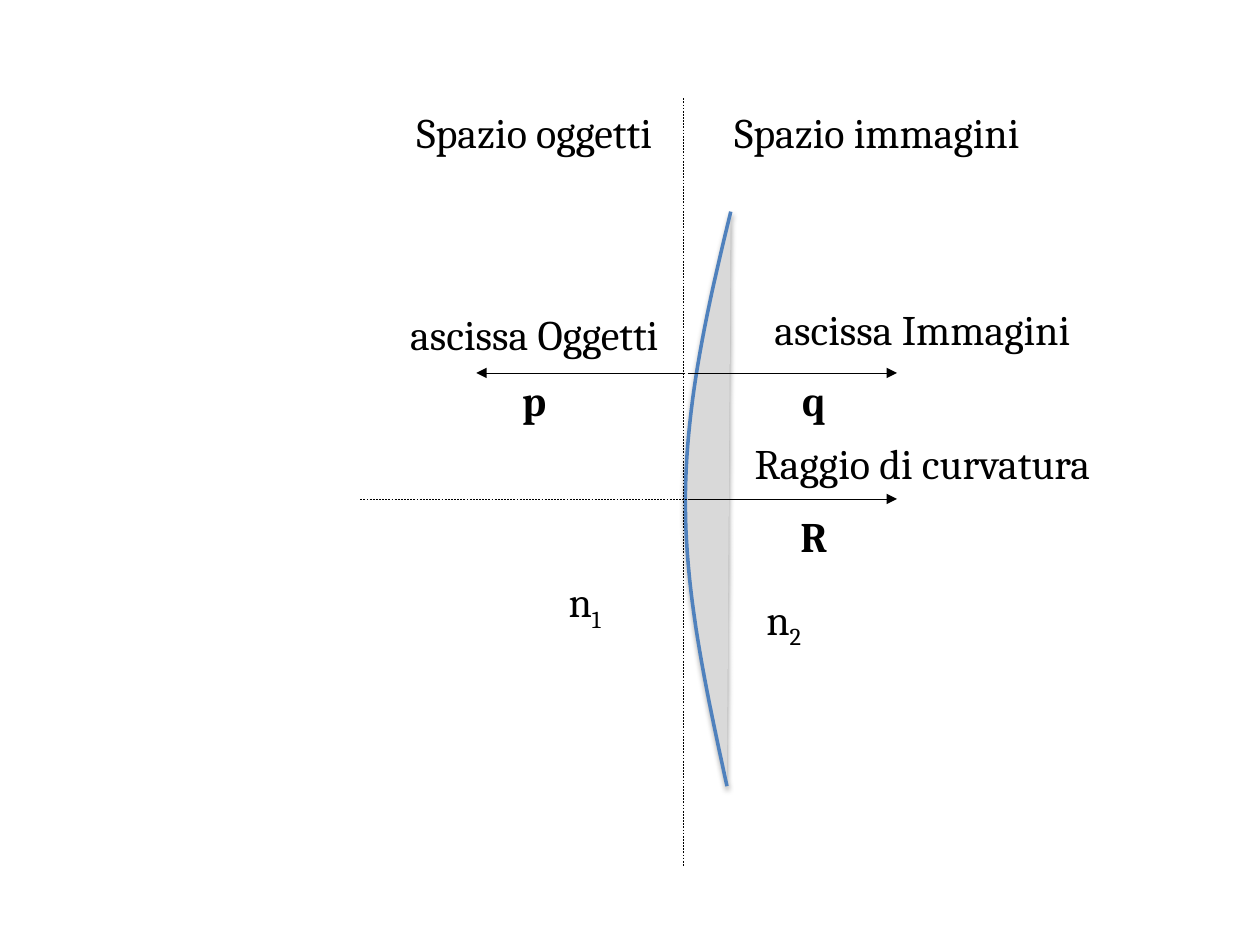
import pptx
import pptx.util
import pptx.dml.color
import pptx.enum.dml
import pptx.enum.shapes
import pptx.enum.text
import pptx.oxml
import pptx.oxml.ns
from pptx.util import Inches

THEME = {
    "font": "Cambria",
    "size": 24,
    "ink": "000000",
    "glass": "D9D9D9",
    "surface": "4F81BD",
    "surface_width": 2,
    "thin": 0.25,
}

# Two Bezier arcs meeting at the vertex of the lens surface
SURFACE_ARCS = [
    [(5.8, 1.68), (5.62, 2.42), (5.45, 3.16), (5.44, 3.92)],
    [(5.44, 3.92), (5.43, 4.68), (5.6, 5.46), (5.77, 6.24)],
]
ARC_STEPS = 24

# start, end
AXES = [
    ((2.86, 3.96), (6.9, 3.96)),
    ((5.42, 0.78), (5.42, 6.88)),
]
ARROWS = [
    ((5.44, 2.96), (3.78, 2.96)),
    ((5.46, 2.96), (7.12, 2.96)),
    ((5.46, 3.96), (7.12, 3.96)),
]

# text, subscript, left, top
CAPTIONS = [
    ("Spazio oggetti", "", 2.8, 0.8),
    ("Spazio immagini", "", 5.52, 0.8),
    ("ascissa Oggetti", "", 2.8, 2.4),
    ("ascissa Immagini", "", 5.88, 2.36),
    ("Raggio di curvatura", "", 5.88, 3.42),
]
SYMBOLS = [
    ("p", "", 3.94, 2.92),
    ("q", "", 6.16, 2.92),
    ("R", "", 6.16, 4),
]
INDICES = [
    ("n", "1", 4.1, 4.52),
    ("n", "2", 5.68, 4.66),
]
# labels, width, bold
LABEL_GROUPS = [(CAPTIONS, 2.88, False), (SYMBOLS, 0.6, True), (INDICES, 1.08, False)]
LABEL_HEIGHT = 0.5

NS = pptx.oxml.ns.nsdecls("a")
SHADOW = (
    f'<a:effectLst {NS}><a:outerShdw blurRad="{pptx.util.Pt(3.1)}" '
    f'dist="{pptx.util.Pt(1.6)}" dir="5400000" rotWithShape="0">'
    f'<a:srgbClr val="{THEME["ink"]}"><a:alpha val="38000"/></a:srgbClr>'
    "</a:outerShdw></a:effectLst>"
)


def color(name):
    return pptx.dml.color.RGBColor.from_string(THEME[name])


def bezier(arc, t):
    weights = ((1 - t) ** 3, 3 * t * (1 - t) ** 2, 3 * t**2 * (1 - t), t**3)
    return tuple(
        Inches(sum(w * point[axis] for w, point in zip(weights, arc)))
        for axis in (0, 1)
    )


def add_lens(slide):
    outline = [
        bezier(arc, step / ARC_STEPS)
        for arc in SURFACE_ARCS
        for step in range(ARC_STEPS + 1)
    ]
    builder = slide.shapes.build_freeform(*outline[0])
    builder.add_line_segments(outline[1:], close=False)
    lens = builder.convert_to_shape()
    lens.fill.solid()
    lens.fill.fore_color.rgb = color("glass")
    lens.line.color.rgb = color("surface")
    lens.line.width = pptx.util.Pt(THEME["surface_width"])
    lens._element.spPr.append(pptx.oxml.parse_xml(SHADOW))


def add_line(slide, start, end, dashed=False, arrow=False):
    connector = slide.shapes.add_connector(
        pptx.enum.shapes.MSO_CONNECTOR.STRAIGHT, *map(Inches, start + end)
    )
    connector.line.color.rgb = color("ink")
    connector.line.width = pptx.util.Pt(THEME["thin"])
    if dashed:
        connector.line.dash_style = pptx.enum.dml.MSO_LINE.DASH
    if arrow:
        connector.line._get_or_add_ln().append(
            pptx.oxml.parse_xml(f'<a:tailEnd {NS} type="triangle"/>')
        )
    connector._element.spPr.append(pptx.oxml.parse_xml(f"<a:effectLst {NS}/>"))


def add_label(slide, text, subscript, left, top, width, bold):
    label = slide.shapes.add_textbox(*map(Inches, (left, top, width, LABEL_HEIGHT)))
    frame = label.text_frame
    frame.word_wrap = True
    frame.auto_size = pptx.enum.text.MSO_AUTO_SIZE.SHAPE_TO_FIT_TEXT
    paragraph = frame.paragraphs[0]
    paragraph.alignment = pptx.enum.text.PP_ALIGN.CENTER
    paragraph.font.name = THEME["font"]
    paragraph.font.size = pptx.util.Pt(THEME["size"])
    paragraph.font.bold = bold
    paragraph.font.color.rgb = color("ink")
    paragraph.add_run().text = text
    if subscript:
        index = paragraph.add_run()
        index.text = subscript
        index._r.get_or_add_rPr().set("baseline", "-25000")


def main():
    deck = pptx.Presentation()
    deck.slide_width, deck.slide_height = Inches(10), Inches(7.5)
    slide = deck.slides.add_slide(deck.slide_layouts[6])

    add_lens(slide)
    for start, end in AXES:
        add_line(slide, start, end, dashed=True)
    for start, end in ARROWS:
        add_line(slide, start, end, arrow=True)
    for labels, width, bold in LABEL_GROUPS:
        for label in labels:
            add_label(slide, *label, width, bold)

    deck.save("out.pptx")


if __name__ == "__main__":
    main()
